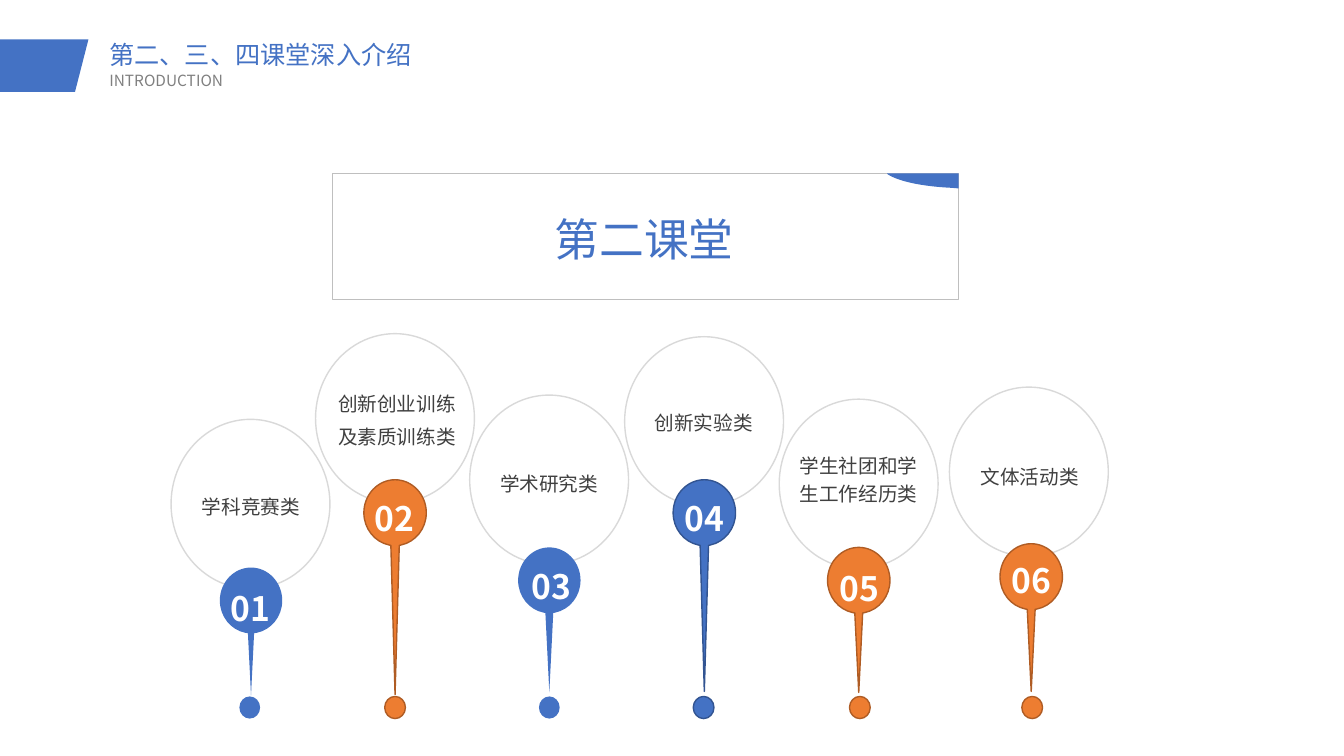
"""Build the slide on the second classroom with its six numbered pins."""
import lxml.etree
import pptx
import pptx.dml.color
import pptx.enum.shapes
import pptx.enum.text
import pptx.oxml.ns
import pptx.util

Pt = pptx.util.Pt
RGB = pptx.dml.color.RGBColor
KIND = pptx.enum.shapes.MSO_SHAPE
ALIGN = pptx.enum.text.PP_ALIGN
qn = pptx.oxml.ns.qn

BLUE = RGB(0x44, 0x72, 0xC4)
NAVY = RGB(0x32, 0x54, 0x91)
ORANGE = RGB(0xED, 0x7D, 0x31)
RUST = RGB(0xAF, 0x5C, 0x24)
WHITE = RGB(0xFF, 0xFF, 0xFF)
DARK = RGB(0x40, 0x40, 0x40)
GRAY = RGB(0x80, 0x80, 0x80)
SILVER = RGB(0xBF, 0xBF, 0xBF)
PALE = RGB(0xD9, 0xD9, 0xD9)

FACE = "Noto Sans CJK SC"
FRAME = {"word_wrap": True, "auto_size": pptx.enum.text.MSO_AUTO_SIZE.NONE,
         "vertical_anchor": pptx.enum.text.MSO_ANCHOR.TOP}
FLUSH = {"margin_left": 0, "margin_top": 0, "margin_right": 0, "margin_bottom": 0}
HEAD = {"size": Pt(18), "color": BLUE}
SUB = {"size": Pt(11), "color": GRAY}
BANNER = {"size": Pt(32), "color": BLUE}
NUMBER = {"size": Pt(24), "color": WHITE, "bold": True}
LABEL = {"size": Pt(14), "color": DARK}
LEFT = {"alignment": ALIGN.LEFT, "line_spacing": 0.9, "space_before": Pt(0)}
MID = {"alignment": ALIGN.CENTER}

RING = (113.5, 121)
KNOB = (22.3, 23.6)
DOT = (7.4, 7.9)
DOT_Y = 505.4
BEND = 0.55

PINS = [
    {"ring": (122.2, 299.5), "knob": (179.3, 405.4), "tip": 496.8, "half": 2.2,
     "dot": 178.4, "digit": (152.2, 419.8), "label": (133.9, 349.9),
     "lines": ["学科竞赛类"], "paint": (BLUE, None)},
    {"ring": (225.4, 238.3), "knob": (282.2, 342.7), "tip": 496.1, "half": 3,
     "dot": 282.2, "digit": (255, 355.7), "label": (238.3, 276.7),
     "lines": ["创新创业训练", "及素质训练类"], "paint": (ORANGE, RUST)},
    {"ring": (335.5, 282.2), "knob": (392.4, 391), "tip": 494.6, "half": 2.8,
     "dot": 392.4, "digit": (367.3, 404.6), "label": (347, 333.8),
     "lines": ["学术研究类"], "paint": (BLUE, None)},
    {"ring": (446.2, 240.5), "knob": (503.1, 342.7), "tip": 493.9, "half": 3,
     "dot": 502.6, "digit": (476.6, 355.7), "label": (457.4, 290.2),
     "lines": ["创新实验类"], "paint": (BLUE, NAVY)},
    {"ring": (556.6, 285.1), "knob": (613.4, 391), "tip": 494.6, "half": 2.8,
     "dot": 614.2, "digit": (587.5, 405.8), "label": (568, 320.6),
     "lines": ["学生社团和学生工作经历类"], "paint": (ORANGE, RUST)},
    {"ring": (678.2, 276.5), "knob": (736.6, 388.4), "tip": 493.9, "half": 2.8,
     "dot": 737.3, "digit": (709.9, 400), "label": (690.3, 329),
     "lines": ["文体活动类"], "paint": (ORANGE, RUST)},
]


def apply(item, form):
    for name, value in form.items():
        setattr(item, name, value)


def paint(shape, fill=None, line=None):
    shape.shadow.inherit = False
    if fill is None:
        shape.fill.background()
    else:
        shape.fill.solid()
        shape.fill.fore_color.rgb = fill
    if line is None:
        shape.line.fill.background()
    else:
        shape.line.color.rgb = line
        shape.line.width = Pt(1)


def write(shape, lines, font, para, frame):
    box = shape.text_frame
    apply(box, frame)
    for order, text in enumerate(lines):
        part = box.paragraphs[0] if order == 0 else box.add_paragraph()
        apply(part, para)
        if order:
            part.space_before = Pt(3)
        run = part.add_run()
        run.text = text
        form = {**font, "name": FACE}
        run.font.color.rgb = form.pop("color")
        apply(run.font, form)
        east = lxml.etree.SubElement(run.font._element, qn("a:ea"))
        east.set("typeface", FACE)


def place(shape, *box):
    apply(shape, dict(zip(("left", "top", "width", "height"), map(Pt, box))))


def add_text(slide, box, lines, font, para, frame):
    shape = slide.shapes.add_textbox(*map(Pt, box))
    write(shape, lines, font, para, {**FRAME, **frame})


def add_basic(slide, kind, box, line):
    paint(slide.shapes.add_shape(kind, *map(Pt, box)), line=line)


def add_path(slide, loops, fill, line=None):
    """Draw loops of steps, where one point is a line and three are a curve."""
    pen = None
    for (start,), *steps in loops:
        start = tuple(map(Pt, start))
        if pen is None:
            pen = slide.shapes.build_freeform(*start, scale=1.0)
        else:
            pen.move_to(*start)
        pen.add_line_segments([(Pt(x), Pt(y)) for step in steps for x, y in step])
    shape = pen.convert_to_shape()
    legs = iter(list(shape._element.iter(qn("a:lnTo"))))
    for _, *steps in loops:
        for step in steps:
            parts = [next(legs) for _ in step]
            if len(parts) == 3:
                parts[0].addprevious(bend := lxml.etree.Element(qn("a:cubicBezTo")))
                for part in parts:
                    bend.append(part[0])
                    part.getparent().remove(part)
    paint(shape, fill, line)


def trace(x, y, steps):
    return [[(x + dx, y + dy) for dx, dy in step] for step in steps]


def oval(wide, high):
    a, b = wide * BEND, high * BEND
    return [[(0, -high)],
            [(a, -high), (wide, -b), (wide, 0)],
            [(wide, b), (a, high), (0, high)],
            [(-a, high), (-wide, b), (-wide, 0)],
            [(-wide, -b), (-a, -high), (0, -high)]]


def needle(half, drop):
    wide, high = KNOB
    first, right, _, _, left = oval(wide, high)
    return [first, right,
            [(wide, 11.5), (14.4, 20.9), (4.3, 23)],
            [(half, 23.3)], [(0, drop)], [(-half, 23.3)], [(-4.3, 23)],
            [(-14.4, 20.9), (-wide, 11.5), (-wide, 0)], left]


def add_pin(slide, number, pin):
    x, top = pin["knob"]
    y = top + KNOB[1]
    add_basic(slide, KIND.OVAL, (*pin["ring"], *RING), PALE)
    add_path(slide, [trace(pin["dot"], DOT_Y, oval(*DOT)),
                     trace(x, y, needle(pin["half"], pin["tip"] - y))], *pin["paint"])
    add_text(slide, (*pin["digit"], 53.3, 28), [f"{number:02}"], NUMBER, MID, FLUSH)
    high = 18.7 if len(pin["lines"][0]) < 6 else 40
    add_text(slide, (*pin["label"], 90.7, high), pin["lines"], LABEL,
             {**MID, "line_spacing": 1.2}, FLUSH)


def add_head(slide):
    add_path(slide, [[[(0, 28.1)], [(63.2, 28.1)], [(53.6, 65.6)], [(0, 65.6)],
                      [(0, 28.1)]]], BLUE)
    title, body = slide.shapes.title, slide.placeholders[1]
    place(title, 70.9, 26.6, 620.6, 33.8)
    write(title, ["第二、三、四课堂深入介绍"], HEAD, LEFT, FRAME)
    place(body, 70.9, 48.6, 620.6, 23.8)
    props = body.text_frame.paragraphs[0]._p.get_or_add_pPr()
    for name in ("marL", "indent"):
        props.set(name, "0")
    lxml.etree.SubElement(props, qn("a:buNone"))
    write(body, ["INTRODUCTION"], SUB, LEFT, FRAME)


def add_banner(slide):
    add_basic(slide, KIND.RECTANGLE, (237.6, 123.8, 447.1, 90), SILVER)
    add_text(slide, (388.8, 136.1, 142.6, 45.4), ["第二课堂"], BANNER,
             {**MID, "line_spacing": 1.3}, {"word_wrap": False})
    corner = [[(0, 0)], [(51.1, 0)], [(51.1, 10.8)], [(46.1, 10.4)],
              [(25.2, 9.4), (7.9, 5.8), (0, 0.4)], [(0, 0)]]
    add_path(slide, [trace(633.6, 123.8, corner)], BLUE)


def main():
    deck = pptx.Presentation()
    apply(deck, {"slide_width": Pt(960), "slide_height": Pt(540)})
    slide = deck.slides.add_slide(deck.slide_layouts[1])
    add_head(slide)
    add_banner(slide)
    for number, pin in enumerate(PINS, 1):
        add_pin(slide, number, pin)
    deck.save("out.pptx")


if __name__ == "__main__":
    main()
